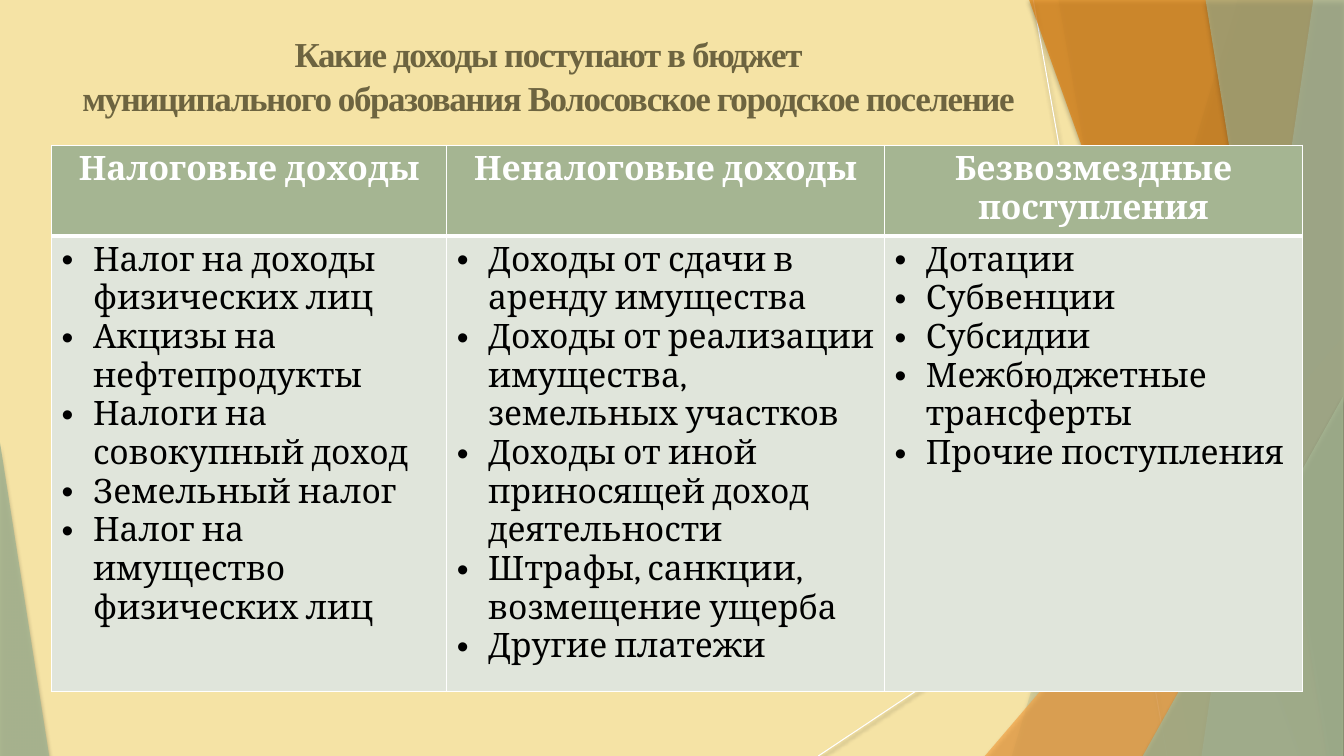
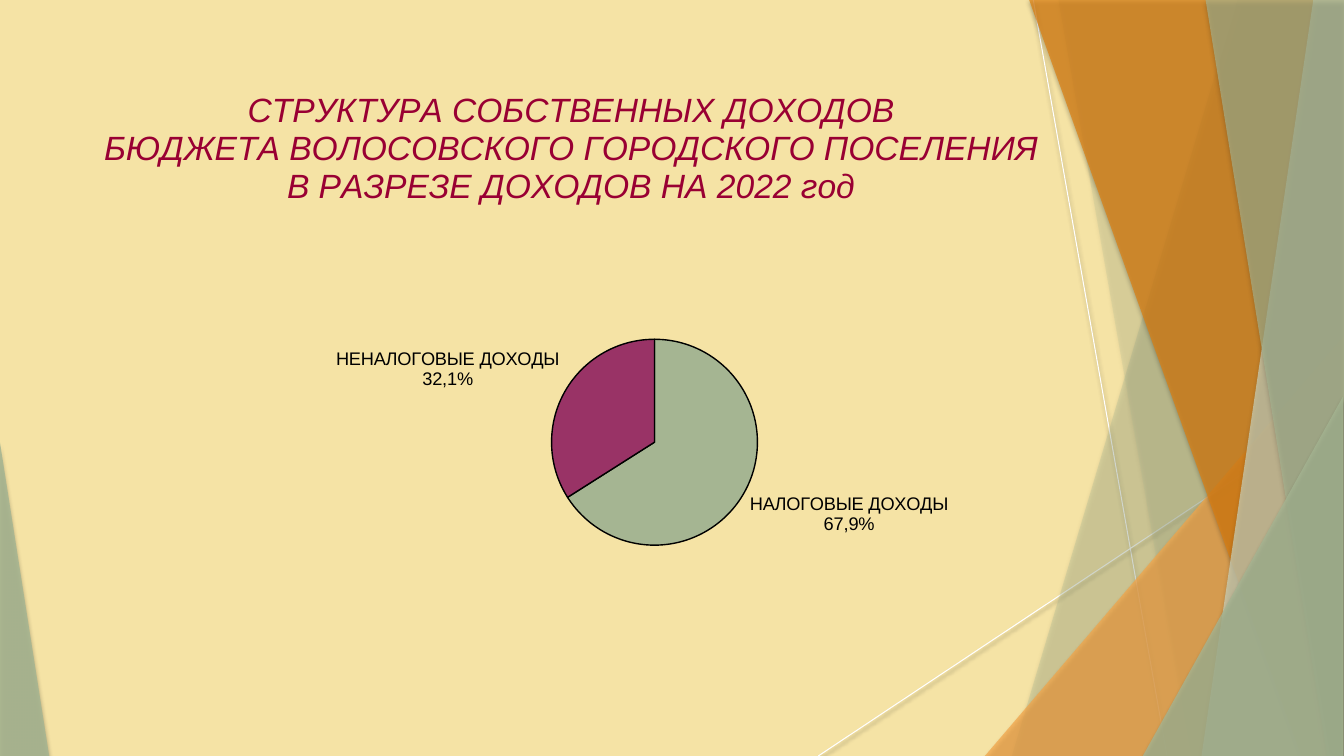
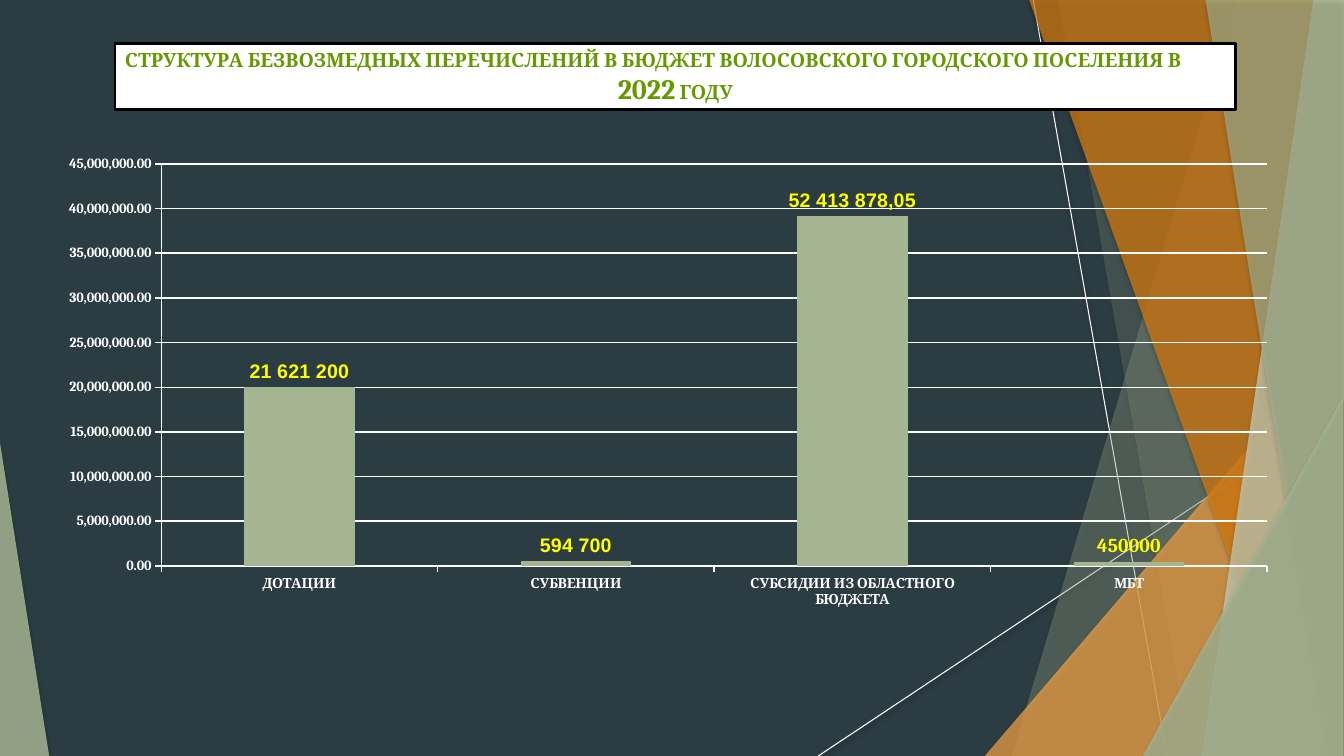
from lxml.etree import SubElement
from pptx import Presentation
from pptx.chart.data import CategoryChartData
from pptx.dml.color import RGBColor
from pptx.enum.chart import XL_CHART_TYPE, XL_LABEL_POSITION, XL_TICK_MARK
from pptx.enum.shapes import MSO_CONNECTOR, MSO_SHAPE
from pptx.enum.text import PP_ALIGN
from pptx.oxml import parse_xml
from pptx.oxml.ns import nsdecls, qn
from pptx.util import Cm, Pt

SAND = RGBColor(0xF5, 0xE3, 0xA5)
SLATE = RGBColor(0x2C, 0x3C, 0x43)
SAGE = RGBColor(0xA5, 0xB5, 0x92)
PALE_SAGE = RGBColor(0xC9, 0xD3, 0xBE)
MIST = RGBColor(0xE0, 0xE5, 0xDB)
AMBER = RGBColor(0xF3, 0xA4, 0x47)
ORANGE = RGBColor(0xDD, 0x7E, 0x0E)
OLIVE = RGBColor(0x6D, 0x64, 0x40)
CRIMSON = RGBColor(0x99, 0x00, 0x33)
PLUM = RGBColor(0x99, 0x33, 0x66)
GREEN = RGBColor(0x66, 0x99, 0x00)
YELLOW = RGBColor(0xFF, 0xFF, 0x00)
WHITE = RGBColor(0xFF, 0xFF, 0xFF)
BLACK = RGBColor(0, 0, 0)

WIDTH, HEIGHT = 33.87, 19.05
HEADING = {"name": "Times New Roman", "size": Pt(25), "bold": True, "color": OLIVE}
HEADER_CELL = {"name": "Cambria", "size": Pt(24), "bold": True, "color": WHITE}
BODY_CELL = HEADER_CELL | {"bold": False, "color": BLACK}
PIE_TITLE = {"name": "Arial", "size": Pt(24), "bold": False, "italic": True, "color": CRIMSON}
PIE_LABEL = {"name": "Arial", "size": Pt(13), "bold": False, "color": BLACK}
BANNER = {"name": "Cambria", "size": Pt(14), "bold": True, "color": GREEN}
AXIS = {"name": "Cambria", "size": Pt(10), "bold": True, "color": WHITE}
BAR_VALUE = {"name": "Cambria", "size": Pt(14), "bold": True, "color": YELLOW}
BAR_LABEL = BAR_VALUE | {"name": "Arial"}

INCOME = {
    "Налоговые доходы": [
        "Налог на доходы физических лиц",
        "Акцизы на нефтепродукты",
        "Налоги на совокупный доход",
        "Земельный налог",
        "Налог на имущество физических лиц",
    ],
    "Неналоговые доходы": [
        "Доходы от сдачи в аренду имущества",
        "Доходы от реализации имущества, земельных участков",
        "Доходы от иной приносящей доход деятельности",
        "Штрафы, санкции, возмещение ущерба",
        "Другие платежи",
    ],
    "Безвозмездные поступления": [
        "Дотации",
        "Субвенции",
        "Субсидии",
        "Межбюджетные трансферты",
        "Прочие поступления",
    ],
}


def set_font(font, look):
    """Apply a dict of format values to a font."""
    for name, value in look.items():
        if name == "color":
            font.color.rgb = value
        else:
            setattr(font, name, value)


def add_run(p, text, look):
    """Append a formatted run to a paragraph."""
    r = p.add_run()
    r.text = text
    set_font(r.font, look)
    return r


def set_line(line, color, points=1):
    """Give a line its colour and width."""
    line.color.rgb = color
    line.width = Pt(points)


def set_shadow(shape, blur, distance, opacity):
    """Cast a soft shadow straight down."""
    shape.element.spPr.append(parse_xml(
        f'<a:effectLst {nsdecls("a")}><a:outerShdw blurRad="{Pt(blur)}" dist="{Pt(distance)}" '
        f'dir="5400000" rotWithShape="0"><a:srgbClr val="000000">'
        f'<a:alpha val="{opacity * 1000}"/></a:srgbClr></a:outerShdw></a:effectLst>'))


def set_glass(shape, color, opacity):
    """Fill a facet with a translucent colour and no outline."""
    shape.fill.solid()
    shape.fill.fore_color.rgb = color
    tint = shape.element.spPr.find(f".//{qn('a:srgbClr')}")
    SubElement(tint, qn("a:alpha"), val=str(opacity * 1000))
    shape.line.fill.background()
    set_shadow(shape, 3, 2, 35)


def add_facets(shapes, box):
    """Draw the rays and glass facets shared by all slides inside a box."""
    left, top, width, height = box
    right, bottom = left + width, top + height

    def add_ray(x1, y1, x2, y2):
        """Draw one white ray."""
        ray = shapes.add_connector(MSO_CONNECTOR.STRAIGHT, Cm(left + x1), Cm(top + y1),
                                   Cm(left + x2), Cm(top + y2))
        set_line(ray.line, WHITE, 0.75)
        set_shadow(ray, 3.1, 1.6, 38)

    def add_band(top_x, bottom_x, color, opacity):
        """Draw a band from a slanted edge to the right side."""
        outline = shapes.build_freeform(Cm(left + top_x), Cm(top - 0.02))
        outline.add_line_segments([(Cm(right), Cm(top - 0.02)), (Cm(right), Cm(bottom)),
                                   (Cm(left + bottom_x), Cm(bottom))])
        set_glass(outline.convert_to_shape(), color, opacity)

    def add_corner(x, w, h, apex, color, opacity):
        """Draw a triangle that stands on the bottom edge."""
        corner = shapes.add_shape(MSO_SHAPE.ISOSCELES_TRIANGLE, Cm(left + x),
                                  Cm(bottom - h), Cm(w), Cm(h))
        corner.adjustments[0] = apex
        set_glass(corner, color, opacity)

    add_ray(26.04, 0, 29.41, height)
    add_ray(width, 10.24, 20.62, height)
    add_band(31.19, 25.5, SAGE, 30)
    add_band(26.67, 30.02, SAGE, 20)
    add_corner(24.82, 9.04, 10.57, 1, AMBER, 72)
    add_band(25.93, 32.79, ORANGE, 70)
    add_band(33.1, 30.28, PALE_SAGE, 70)
    add_band(30.38, 33.45, SAGE, 65)
    add_corner(28.8, 5.05, 9.07, 1, SAGE, 80)
    add_corner(0, 1.24, 7.9, 0, SAGE, 85)


def add_heading(s, box, lines):
    """Place a centred heading with tight letters."""
    tf = s.shapes.add_textbox(*map(Cm, box)).text_frame
    tf.word_wrap = True
    p = tf.paragraphs[0]
    p.alignment = PP_ALIGN.CENTER
    p.line_spacing = 1.05
    for i, line in enumerate(lines):
        if i:
            p.add_line_break()
        r = add_run(p, line, HEADING)
        r.font._element.set("spc", "-100")


def set_cell(cell, color, top, bottom):
    """Fill a cell and draw its white borders."""
    cell.fill.solid()
    cell.fill.fore_color.rgb = color
    tc_pr = cell._tc.get_or_add_tcPr()
    for i, (side, points) in enumerate(zip("LRTB", (1, 1, top, bottom))):
        tc_pr.insert(i, parse_xml(
            f'<a:ln{side} {nsdecls("a")} w="{Pt(points)}"><a:solidFill>'
            f'<a:srgbClr val="{WHITE}"/></a:solidFill></a:ln{side}>'))


def add_bullet(p):
    """Give a paragraph a hanging round bullet."""
    p_pr = p._p.get_or_add_pPr()
    p_pr.set("marL", str(Cm(0.79)))
    p_pr.set("indent", str(Cm(-0.79)))
    SubElement(p_pr, qn("a:buFont"), typeface="Arial")
    SubElement(p_pr, qn("a:buChar"), char="•")


def add_income_table(s, box, income):
    """Place a table with one column of bullets for each kind of income."""
    table = s.shapes.add_table(2, len(income), *map(Cm, box)).table
    table.first_row = table.horz_banding = False
    for row, share in zip(table.rows, (0.14, 0.86)):
        row.height = Cm(box[3] * share)
    for i, (kind, items) in enumerate(income.items()):
        table.columns[i].width = Cm(box[2] * (0.316, 0.35, 0.334)[i])
        head, body = table.cell(0, i), table.cell(1, i)
        set_cell(head, SAGE, 1, 3)
        set_cell(body, MIST, 3, 1)
        p = head.text_frame.paragraphs[0]
        p.alignment = PP_ALIGN.CENTER
        add_run(p, kind, HEADER_CELL)
        tf = body.text_frame
        for j, item in enumerate(items):
            p = tf.add_paragraph() if j else tf.paragraphs[0]
            add_bullet(p)
            add_run(p, item, BODY_CELL)


def set_layout(parent, x, y, size=None):
    """Fix a chart part at fractions of the chart."""
    old = parent.find(qn("c:layout"))
    if old is not None:
        parent.remove(old)
    values = [("xMode", "edge"), ("yMode", "edge"), ("x", x), ("y", y)]
    if size:
        values = [("layoutTarget", "inner"), *values, ("w", size[0]), ("h", size[1])]
    layout = parse_xml(f'<c:layout {nsdecls("c")}><c:manualLayout/></c:layout>')
    for name, value in values:
        SubElement(layout[0], qn(f"c:{name}"), val=str(value))
    parent.insert(0 if parent.find(qn("c:tx")) is None else 1, layout)


def set_lines(tf, lines, look):
    """Write formatted lines, one paragraph each."""
    for i, line in enumerate(lines):
        p = tf.paragraphs[0] if i == 0 else tf.add_paragraph()
        add_run(p, line, look)


def add_plain_chart(s, box, kind, values, plot):
    """Place a one-series chart without legend and return it."""
    data = CategoryChartData()
    data.categories = list(values)
    data.add_series("Series 1", list(values.values()))
    chart = s.shapes.add_chart(kind, *map(Cm, box), data).chart
    chart.has_legend = chart.has_title = False
    set_font(chart.font, {"name": "Arial", "size": Pt(10), "color": BLACK})
    set_layout(chart._chartSpace.chart.plotArea, *plot[:2], plot[2:])
    return chart


def label_point(point, lines, look):
    """Write a custom label outside a data point."""
    label = point.data_label
    set_lines(label.text_frame, lines, look)
    label.position = XL_LABEL_POSITION.OUTSIDE_END


def add_income_pie(s, box, title, values, shares):
    """Place a titled pie with labelled slices."""
    chart = add_plain_chart(s, box, XL_CHART_TYPE.PIE, values, (0.26, 0.42, 0.47, 0.31))
    chart.has_title = True
    set_lines(chart.chart_title.text_frame, title, PIE_TITLE)
    set_layout(chart.chart_title._element, 0.04, 0.04)
    points = chart.plots[0].series[0].points
    for i, (category, share, color) in enumerate(zip(values, shares, (SAGE, PLUM))):
        look = points[i].format
        look.fill.solid()
        look.fill.fore_color.rgb = color
        set_line(look.line, BLACK)
        label_point(points[i], [category, share], PIE_LABEL)


def add_transfer_columns(s, box, values, labels):
    """Place a column chart with white axes and yellow values."""
    chart = add_plain_chart(s, box, XL_CHART_TYPE.COLUMN_CLUSTERED, values,
                            (0.236, 0.033, 0.753, 0.557))
    plot = chart.plots[0]
    plot.gap_width = 150
    plot.vary_by_categories = False
    for axis in (chart.category_axis, chart.value_axis):
        axis.major_tick_mark = XL_TICK_MARK.OUTSIDE
        set_font(axis.tick_labels.font, AXIS)
        set_line(axis.format.line, WHITE)
    axis = chart.value_axis
    axis.minimum_scale, axis.maximum_scale, axis.major_unit = 0, 45000000, 5000000
    axis.tick_labels.number_format = "#,##0.00"
    axis.tick_labels.number_format_is_linked = False
    set_line(axis.major_gridlines.format.line, WHITE)
    series = plot.series[0]
    series.format.fill.solid()
    series.format.fill.fore_color.rgb = SAGE
    series.data_labels.show_value = True
    series.data_labels.position = XL_LABEL_POSITION.OUTSIDE_END
    set_font(series.data_labels.font, BAR_VALUE)
    for i, label in enumerate(labels):
        label_point(series.points[i], [label], BAR_LABEL)


def add_banner(s, box, text, year, suffix):
    """Place a white framed banner of two lines."""
    sp = s.shapes.add_shape(MSO_SHAPE.RECTANGLE, *map(Cm, box))
    sp.shadow.inherit = False
    sp.fill.solid()
    sp.fill.fore_color.rgb = WHITE
    set_line(sp.line, BLACK, 2)
    tf = sp.text_frame
    tf.word_wrap = True
    p = tf.paragraphs[0]
    p.alignment = PP_ALIGN.LEFT
    add_run(p, text, BANNER)
    p = tf.add_paragraph()
    p.alignment = PP_ALIGN.CENTER
    add_run(p, year, BANNER | {"size": Pt(20)})
    add_run(p, f" {suffix}", BANNER)


def add_slide(prs, color):
    """Add a blank slide with a plain background."""
    s = prs.slides.add_slide(prs.slide_layouts[6])
    s.background.fill.solid()
    s.background.fill.fore_color.rgb = color
    return s


def share_facets(prs, s):
    """Put the facets on the blank layout so that every slide shows them."""
    layout = prs.slide_layouts[6]
    for ph in list(layout.placeholders):
        ph.element.getparent().remove(ph.element)
    group = s.shapes.add_group_shape()
    add_facets(group.shapes, (0, 0, WIDTH, HEIGHT))
    layout.shapes.element.append(group.element)


def main():
    """Build the three slides and save them."""
    prs = Presentation()
    prs.slide_width, prs.slide_height = Cm(WIDTH), Cm(HEIGHT)

    s = add_slide(prs, SAND)
    share_facets(prs, s)
    add_heading(s, (0.53, 0.64, 26.59, 2.72), [
        "Какие доходы поступают в бюджет",
        "муниципального образования Волосовское городское поселение"])
    add_income_table(s, (1.3, 3.66, 31.52, 13.34), INCOME)

    s = add_slide(prs, SAND)
    add_income_pie(s, (1.32, 1.52, 30.66, 16.74), [
        "СТРУКТУРА СОБСТВЕННЫХ ДОХОДОВ",
        "БЮДЖЕТА ВОЛОСОВСКОГО ГОРОДСКОГО ПОСЕЛЕНИЯ",
        "В РАЗРЕЗЕ ДОХОДОВ НА 2022 год",
    ], {"НАЛОГОВЫЕ ДОХОДЫ": 66, "НЕНАЛОГОВЫЕ ДОХОДЫ": 34}, ("67,9%", "32,1%"))

    s = add_slide(prs, SLATE)
    add_transfer_columns(s, (-4.67, 3.53, 37.01, 18.19), {
        "ДОТАЦИИ": 20071200,
        "СУБВЕНЦИИ": 562800,
        "СУБСИДИИ ИЗ ОБЛАСТНОГО БЮДЖЕТА": 39181130,
        "МБТ": 450000,
    }, ("21 621 200", "594 700", "52 413 878,05"))
    add_banner(s, (2.9, 1.09, 28.24, 1.68),
               "СТРУКТУРА БЕЗВОЗМЕДНЫХ ПЕРЕЧИСЛЕНИЙ В БЮДЖЕТ ВОЛОСОВСКОГО ГОРОДСКОГО ПОСЕЛЕНИЯ В",
               "2022", "ГОДУ")
    prs.save("out.pptx")


if __name__ == "__main__":
    main()
